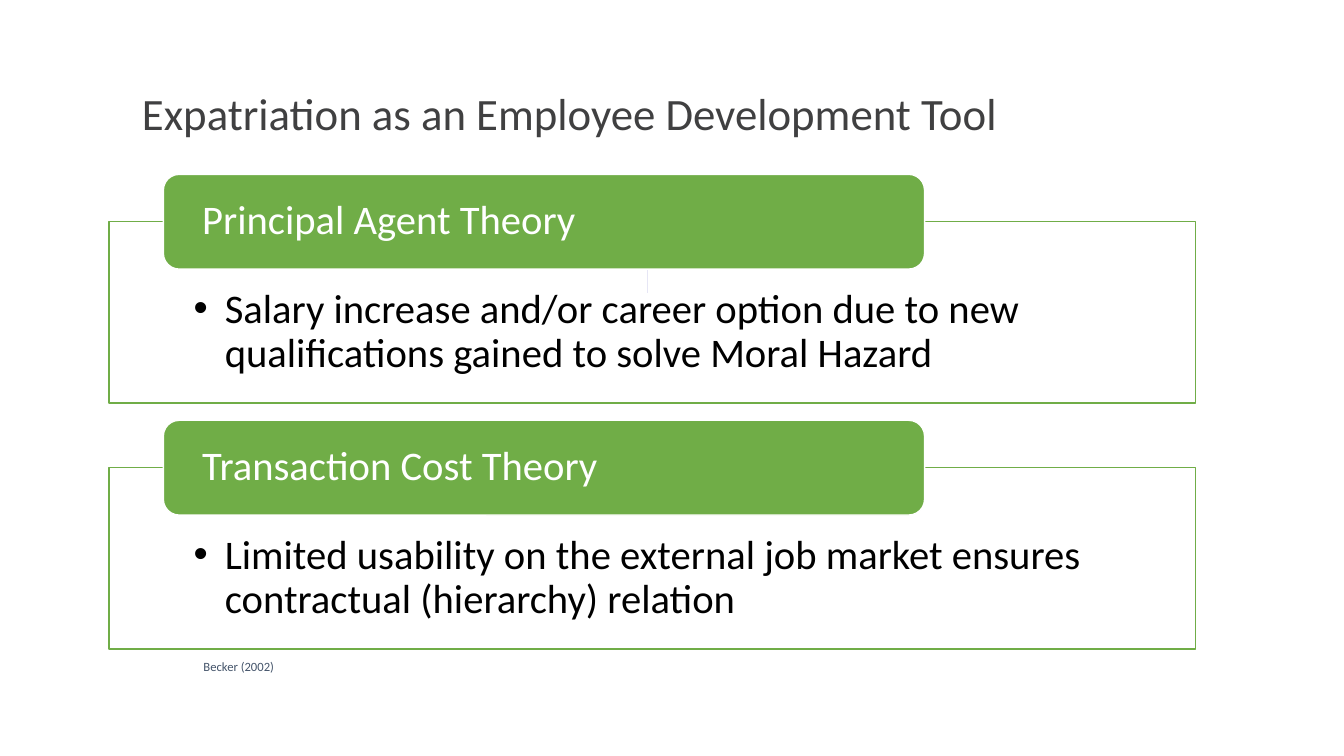
import pptx
import pptx.dml.color
import pptx.enum.shapes
import pptx.enum.text
import pptx.oxml.ns
import pptx.util
from lxml import etree

PX = 9144  # EMU per px, 100 px to the inch
FONT = "Calibri"
COLORS = {
    "title": "404041",
    "green": "70AD47",
    "white": "FFFFFF",
    "black": "000000",
    "source": "44546A",
    "navy": "000099",
}
SHAPES = pptx.enum.shapes.MSO_SHAPE
ANCHORS = pptx.enum.text.MSO_ANCHOR


def px(value):
    return pptx.util.Emu(value * PX)


def rgb(name):
    return pptx.dml.color.RGBColor.from_string(COLORS[name])


def add_child(parent, tag, **attributes):
    return etree.SubElement(parent, pptx.oxml.ns.qn(tag), attributes)


def write(frame, text, size, color, anchor=ANCHORS.TOP, insets=(10, 5, 10, 5),
          spacing=None, bullet_indent=0):
    """Fill a text frame with one formatted paragraph."""
    frame.word_wrap = True
    frame.vertical_anchor = anchor
    (frame.margin_left, frame.margin_top,
     frame.margin_right, frame.margin_bottom) = map(px, insets)
    paragraph = frame.paragraphs[0]
    if bullet_indent:
        properties = paragraph._p.get_or_add_pPr()
        properties.set("marL", str(px(bullet_indent)))
        properties.set("indent", str(-px(bullet_indent)))
        add_child(properties, "a:buFont", typeface="Arial")
        add_child(properties, "a:buChar", char="•")
    paragraph.alignment = pptx.enum.text.PP_ALIGN.LEFT
    if spacing:
        paragraph.line_spacing = spacing
    run = paragraph.add_run()
    run.text = text
    run.font.name = FONT
    run.font.size = pptx.util.Pt(size)
    run.font.color.rgb = rgb(color)


class TheorySlide:
    def __init__(self, presentation):
        self.slide = presentation.slides.add_slide(presentation.slide_layouts[6])
        self.shapes = self.slide.shapes

    def text(self, box, text, **style):
        write(self.shapes.add_textbox(*map(px, box)).text_frame, text, **style)

    def line(self, start, end, color, width):
        line = self.shapes.add_connector(
            pptx.enum.shapes.MSO_CONNECTOR.STRAIGHT, *map(px, start + end))
        line.line.color.rgb = rgb(color)
        line.line.width = pptx.util.Pt(width)
        add_child(line._element.spPr, "a:effectLst")

    def panel(self, kind, box, fill, outline, text, opacity=100, **style):
        panel = self.shapes.add_shape(kind, *map(px, box))
        panel.shadow.inherit = False
        panel.fill.solid()
        panel.fill.fore_color.rgb = rgb(fill)
        if opacity < 100:
            color = panel._element.spPr.find(".//" + pptx.oxml.ns.qn("a:srgbClr"))
            add_child(color, "a:alpha", val=str(opacity * 1000))
        panel.line.color.rgb = rgb(outline)
        panel.line.width = pptx.util.Pt(1)
        write(panel.text_frame, text, size=29, spacing=0.9, **style)

    def theory(self, top, heading, consequence):
        self.panel(SHAPES.RECTANGLE, (108, top + 47, 1078, 180), "white", "green",
                   consequence, opacity=90, color="black",
                   insets=(84, 66, 84, 23), bullet_indent=31)
        self.panel(SHAPES.ROUNDED_RECTANGLE, (162, top, 755, 94), "green", "white",
                   heading, color="white", anchor=ANCHORS.MIDDLE,
                   insets=(34, 5, 34, 5))


def main():
    presentation = pptx.Presentation()
    presentation.slide_width, presentation.slide_height = px(1333), px(750)
    page = TheorySlide(presentation)

    # Title, centre line and source
    page.text((131, 57, 933, 117), "Expatriation as an Employee Development Tool",
              size=32, color="title", anchor=ANCHORS.MIDDLE, spacing=0.9)
    page.line((642, 249), (642, 291), "navy", 0.75)
    page.text((192, 649, 733, 25), "Becker (2002)", size=9, color="source")

    # Theories with their consequence
    theories = [
        ("Principal Agent Theory",
         "Salary increase and/or career option due to new qualifications "
         "gained to solve Moral Hazard"),
        ("Transaction Cost Theory",
         "Limited usability on the external job market ensures contractual "
         "(hierarchy) relation"),
    ]
    for row, (heading, consequence) in enumerate(theories):
        page.theory(173 + 244 * row, heading, consequence)

    presentation.save("out.pptx")


if __name__ == "__main__":
    main()
